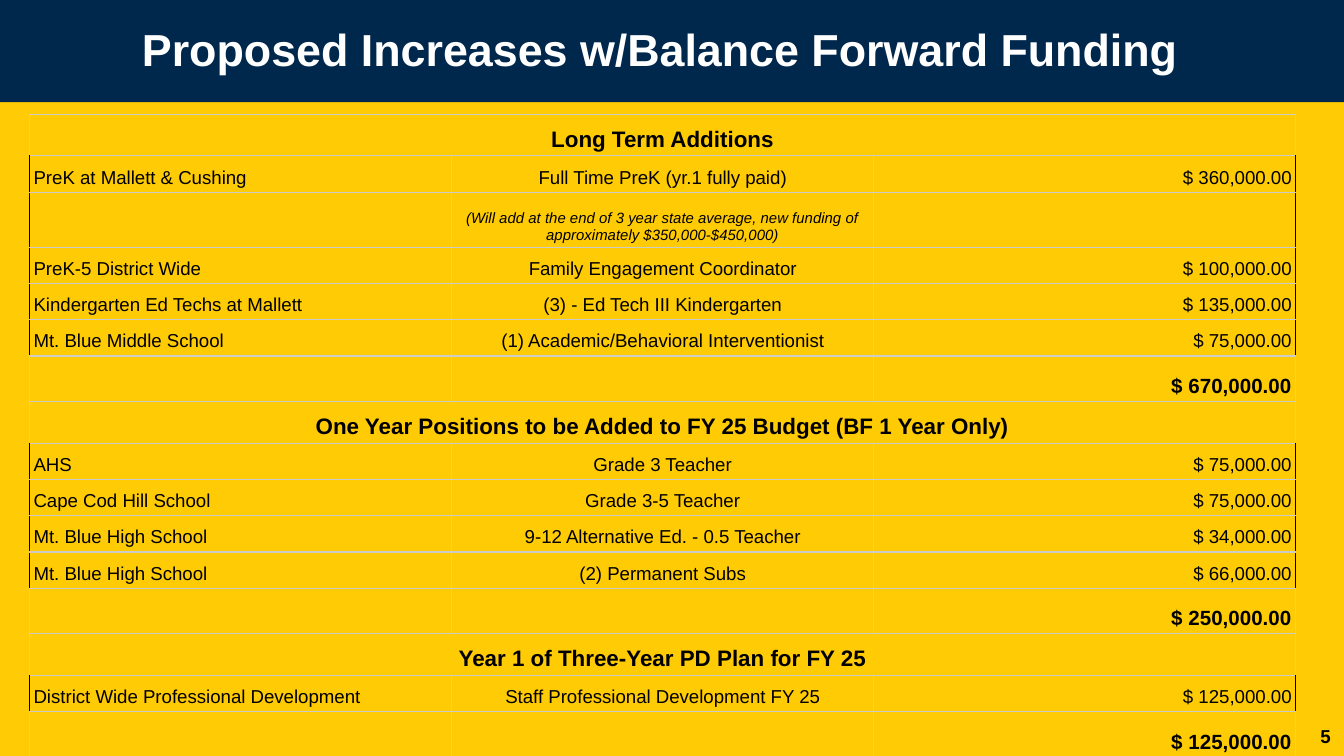
from dataclasses import dataclass

from lxml import etree
from pptx import Presentation
from pptx.dml.color import RGBColor
from pptx.enum.shapes import MSO_SHAPE
from pptx.enum.text import MSO_ANCHOR, PP_ALIGN
from pptx.oxml.ns import qn
from pptx.util import Inches, Pt

NAVY = RGBColor(0x00, 0x27, 0x4C)
GOLD = RGBColor(0xFF, 0xCB, 0x05)
WHITE = RGBColor(0xFF, 0xFF, 0xFF)
BLACK = RGBColor(0x00, 0x00, 0x00)
GRAY = RGBColor(0xCC, 0xCC, 0xCC)
LEFT, CENTER, RIGHT = PP_ALIGN.LEFT, PP_ALIGN.CENTER, PP_ALIGN.RIGHT
MIDDLE, BOTTOM = MSO_ANCHOR.MIDDLE, MSO_ANCHOR.BOTTOM
RECTANGLE = MSO_SHAPE.RECTANGLE

FONT = "Arial"
SLIDE_WIDTH = 10
SLIDE_HEIGHT = SLIDE_WIDTH * 9 / 16
COLUMN_WIDTH = 3.14
COLUMN_ALIGNMENTS = (LEFT, CENTER, RIGHT)
BORDER_SIDES = ("L", "R", "T", "B")


@dataclass(frozen=True)
class RowStyle:
    height: float
    size: float
    bold: bool = False
    italic: bool = False
    merged: bool = False
    side_color: RGBColor = GRAY


@dataclass(frozen=True)
class BudgetRow:
    style: RowStyle
    texts: tuple[str, str, str]


SECTION = RowStyle(0.31, 12, bold=True, merged=True)
ITEM = RowStyle(0.27, 10, side_color=BLACK)
NOTE = RowStyle(0.41, 8, italic=True, side_color=BLACK)
TOTAL = RowStyle(0.34, 11, bold=True)


def section(title: str) -> BudgetRow:
    return BudgetRow(SECTION, (title, "", ""))


def item(place: str, position: str, amount: str) -> BudgetRow:
    return BudgetRow(ITEM, (place, position, amount))


def total(amount: str) -> BudgetRow:
    return BudgetRow(TOTAL, ("", "", amount))


ROWS = [
    section("Long Term Additions"),
    item("PreK at Mallett & Cushing", "Full Time PreK (yr.1 fully paid)", "$ 360,000.00"),
    BudgetRow(NOTE, ("", "(Will add at the end of 3 year state average, new funding of "
                         "approximately $350,000-$450,000)", "")),
    item("PreK-5 District Wide", "Family Engagement Coordinator", "$ 100,000.00"),
    item("Kindergarten Ed Techs at Mallett", "(3) - Ed Tech III Kindergarten", "$ 135,000.00"),
    item("Mt. Blue Middle School", "(1) Academic/Behavioral Interventionist", "$ 75,000.00"),
    total("$ 670,000.00"),
    section("One Year Positions to be Added to FY 25 Budget (BF 1 Year Only)"),
    item("AHS", "Grade 3 Teacher", "$ 75,000.00"),
    item("Cape Cod Hill School", "Grade 3-5 Teacher", "$ 75,000.00"),
    item("Mt. Blue High School", "9-12 Alternative Ed. - 0.5 Teacher", "$ 34,000.00"),
    item("Mt. Blue High School", "(2) Permanent Subs", "$ 66,000.00"),
    total("$ 250,000.00"),
    section("Year 1 of Three-Year PD Plan for FY 25"),
    item("District Wide Professional Development", "Staff Professional Development FY 25",
         "$ 125,000.00"),
    total("$ 125,000.00"),
]


def write_text(text_frame, text: str, *, size: float, color: RGBColor = BLACK,
               bold: bool = False, italic: bool = False, alignment=LEFT,
               line_spacing: float = 1.0) -> None:
    paragraph = text_frame.paragraphs[0]
    paragraph.alignment = alignment
    paragraph.line_spacing = line_spacing
    if not text:
        # Keeps an empty cell from growing to the default text size.
        end_properties = paragraph._p.get_or_add_endParaRPr()
        end_properties.set("sz", str(int(size * 100)))
        return
    run = paragraph.add_run()
    run.text = text
    run.font.name = FONT
    run.font.size = Pt(size)
    run.font.bold = bold
    run.font.italic = italic
    run.font.color.rgb = color


def set_border(cell, side: str, color: RGBColor) -> None:
    properties = cell._tc.get_or_add_tcPr()
    line = etree.SubElement(properties, qn(f"a:ln{side}"), w=str(Pt(0.75)))
    fill = etree.SubElement(line, qn("a:solidFill"))
    etree.SubElement(fill, qn("a:srgbClr"), val=str(color))


def format_cell(cell, column: int, style: RowStyle) -> None:
    cell.vertical_anchor = BOTTOM
    cell.margin_left = cell.margin_right = Inches(0.03)
    cell.margin_top = cell.margin_bottom = Inches(0.03)
    outer_side = {0: "L", 2: "R"}.get(column)
    for side in BORDER_SIDES:
        set_border(cell, side, style.side_color if side == outer_side else GRAY)
    cell.fill.background()


def add_budget_table(slide, rows: list[BudgetRow]) -> None:
    column_count = len(COLUMN_ALIGNMENTS)
    table = slide.shapes.add_table(
        len(rows), column_count, Inches(0.22), Inches(0.85),
        Inches(COLUMN_WIDTH * column_count),
        Inches(sum(row.style.height for row in rows))).table
    table.first_row = False
    table.horz_banding = False
    for column in table.columns:
        column.width = Inches(COLUMN_WIDTH)
    for row_index, row in enumerate(rows):
        style = row.style
        table.rows[row_index].height = Inches(style.height)
        for column, text in enumerate(row.texts):
            cell = table.cell(row_index, column)
            format_cell(cell, column, style)
            write_text(cell.text_frame, text, size=style.size, bold=style.bold,
                       italic=style.italic,
                       alignment=CENTER if style.merged else COLUMN_ALIGNMENTS[column],
                       line_spacing=1.15 if style.merged else 1.0)
        if style.merged:
            table.cell(row_index, 0).merge(table.cell(row_index, column_count - 1))


def add_title_band(slide, text: str) -> None:
    band = slide.shapes.add_shape(RECTANGLE, 0, 0, Inches(SLIDE_WIDTH), Inches(0.76))
    band.shadow.inherit = False
    band.fill.solid()
    band.fill.fore_color.rgb = NAVY
    band.line.fill.background()
    text_frame = band.text_frame
    text_frame.word_wrap = True
    text_frame.vertical_anchor = MIDDLE
    text_frame.margin_right = Inches(0.28)
    text_frame.margin_bottom = Inches(0.14)
    write_text(text_frame, text, size=24, color=WHITE, bold=True,
               alignment=CENTER, line_spacing=1.15)


def add_slide_number(slide, number: str) -> None:
    text_frame = slide.shapes.add_textbox(
        Inches(9.4), Inches(5.26), Inches(0.6), Inches(0.43)).text_frame
    text_frame.word_wrap = True
    text_frame.vertical_anchor = MIDDLE
    write_text(text_frame, number, size=10, bold=True, alignment=RIGHT)


def main() -> None:
    presentation = Presentation()
    presentation.slide_width = Inches(SLIDE_WIDTH)
    presentation.slide_height = Inches(SLIDE_HEIGHT)
    slide = presentation.slides.add_slide(presentation.slide_layouts[6])
    slide.background.fill.solid()
    slide.background.fill.fore_color.rgb = GOLD
    add_title_band(slide, "Proposed Increases w/Balance Forward Funding")
    add_slide_number(slide, "5")
    add_budget_table(slide, ROWS)
    presentation.save("out.pptx")


if __name__ == "__main__":
    main()
